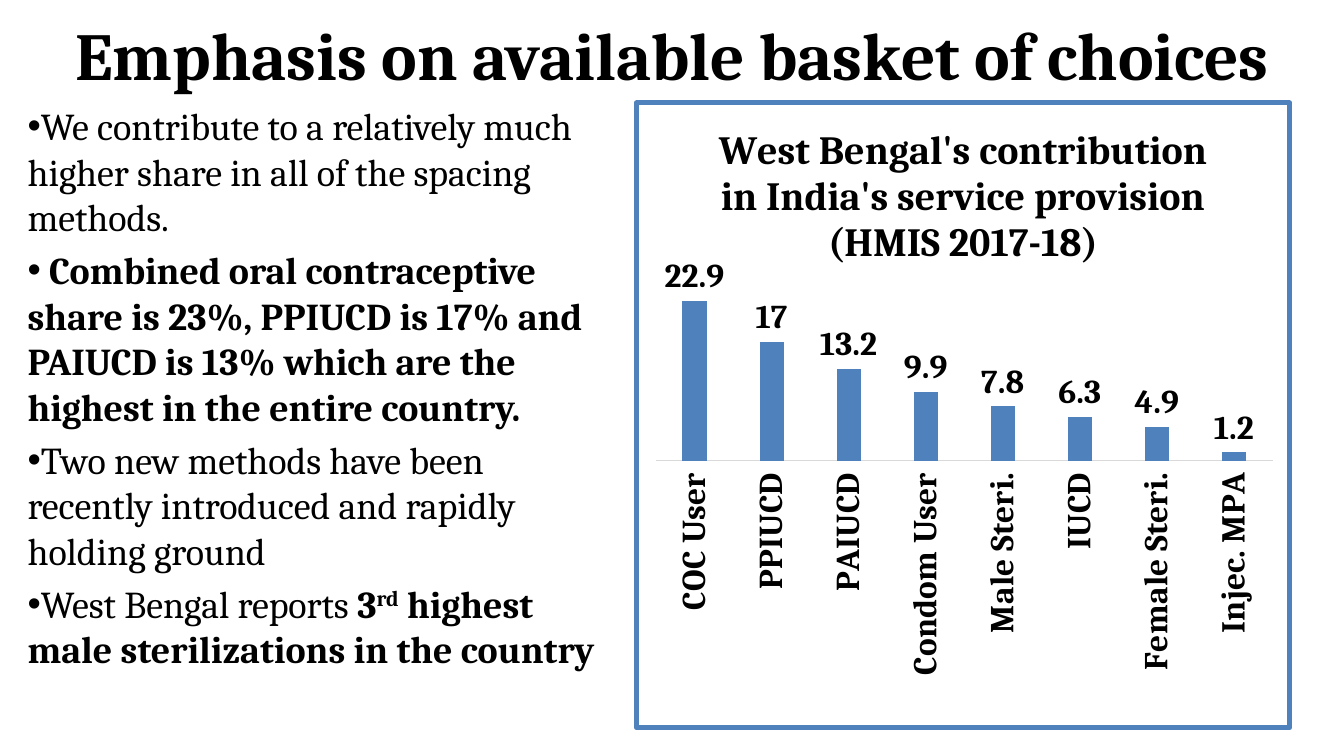
from dataclasses import dataclass

from lxml import etree
from pptx import Presentation
from pptx.chart.data import CategoryChartData
from pptx.dml.color import RGBColor
from pptx.enum.chart import XL_CHART_TYPE, XL_LABEL_POSITION, XL_TICK_LABEL_POSITION, XL_TICK_MARK
from pptx.enum.text import MSO_ANCHOR, MSO_AUTO_SIZE, PP_ALIGN
from pptx.oxml import parse_xml
from pptx.oxml.ns import nsdecls, qn
from pptx.util import Cm, Pt


@dataclass(frozen=True)
class Theme:
    font: str = "Cambria"
    text: RGBColor = RGBColor(0, 0, 0)
    accent: RGBColor = RGBColor(0x4F, 0x81, 0xBD)
    axis: RGBColor = RGBColor(0xD9, 0xD9, 0xD9)
    title_size: float = 40
    body_size: float = 22.6
    chart_title_size: float = 24
    label_size: float = 20


theme = Theme()


def format_font(font, size, bold):
    font.name = theme.font
    font.size = Pt(size)
    font.bold = bold
    font.color.rgb = theme.text


def add_text(paragraph, text, size=theme.body_size, bold=False, baseline=0):
    run = paragraph.add_run()
    run.text = text
    format_font(run.font, size, bold)
    if baseline:
        run.font._element.set("baseline", str(baseline * 1000))


presentation = Presentation()
presentation.slide_width = Cm(28.22)
presentation.slide_height = Cm(15.88)
slide = presentation.slides.add_slide(presentation.slide_layouts[5])

title = slide.shapes.title
title.left, title.top, title.width, title.height = Cm(0.33), Cm(0.43), Cm(27.56), Cm(1.68)
title.text_frame.auto_size = MSO_AUTO_SIZE.NONE
title.text_frame.vertical_anchor = MSO_ANCHOR.BOTTOM
title_paragraph = title.text_frame.paragraphs[0]
title_paragraph.alignment = PP_ALIGN.CENTER
add_text(title_paragraph, "Emphasis on available basket of choices", size=theme.title_size, bold=True)

bullets = [
    [("We contribute to a relatively much higher share in all of the spacing methods.", {})],
    [(" Combined oral contraceptive share is 23%, PPIUCD is 17% and PAIUCD is 13% "
      "which are the highest in the entire country.", {"bold": True})],
    [("Two new methods have been recently introduced and rapidly holding ground", {})],
    [("West Bengal reports ", {}),
     ("3", {"bold": True}),
     ("rd", {"bold": True, "baseline": 30}),
     (" highest male sterilizations in the country", {"bold": True})],
]
body = slide.shapes.add_textbox(Cm(0.33), Cm(2.03), Cm(12.57), Cm(13.61))
body.text_frame.word_wrap = True
for index, parts in enumerate(bullets):
    paragraph = body.text_frame.add_paragraph() if index else body.text_frame.paragraphs[0]
    paragraph.space_before = Pt(4.5)
    properties = paragraph._p.get_or_add_pPr()
    etree.SubElement(properties, qn("a:buFont"), typeface="Arial")
    etree.SubElement(properties, qn("a:buChar"), char="•")
    for text, text_format in parts:
        add_text(paragraph, text, **text_format)

contributions = {
    "COC User": 22.9,
    "PPIUCD": 17,
    "PAIUCD": 13.2,
    "Condom User": 9.9,
    "Male Steri.": 7.8,
    "IUCD": 6.3,
    "Female Steri.": 4.9,
    "Injec. MPA": 1.2,
}
chart_data = CategoryChartData()
chart_data.categories = list(contributions)
chart_data.add_series("Series 1", list(contributions.values()))
chart = slide.shapes.add_chart(
    XL_CHART_TYPE.COLUMN_CLUSTERED, Cm(13.31), Cm(2.11), Cm(13.82), Cm(13.23), chart_data
).chart
format_font(chart.font, theme.label_size, True)
chart.has_legend = False

chart.has_title = True
chart.chart_title.include_in_layout = False
chart_title_frame = chart.chart_title.text_frame
add_text(chart_title_frame.paragraphs[0], "West Bengal's contribution in India's service provision",
         size=theme.chart_title_size, bold=True)
add_text(chart_title_frame.add_paragraph(), "(HMIS 2017-18)",
         size=theme.chart_title_size, bold=True)

value_axis = chart.value_axis
value_axis.visible = False
value_axis.has_major_gridlines = False
value_axis.minimum_scale = 0
value_axis.maximum_scale = 25

category_axis = chart.category_axis
category_axis.major_tick_mark = XL_TICK_MARK.NONE
category_axis.tick_label_position = XL_TICK_LABEL_POSITION.LOW
category_axis.format.line.color.rgb = theme.axis
category_axis.format.line.width = Pt(0.75)
format_font(category_axis.tick_labels.font, theme.label_size, True)
label_body = chart.element.find(".//" + qn("c:catAx")).find(qn("c:txPr")).find(qn("a:bodyPr"))
label_body.set("rot", "-5400000")
label_body.set("vert", "horz")

plot = chart.plots[0]
plot.gap_width = 219
plot.overlap = -27
plot.vary_by_categories = False
series = plot.series[0]
series.format.fill.solid()
series.format.fill.fore_color.rgb = theme.accent
labels = series.data_labels
labels.show_value = True
labels.position = XL_LABEL_POSITION.OUTSIDE_END
format_font(labels.font, theme.label_size, True)

plot_area = chart.element.find(".//" + qn("c:plotArea"))
for layout in plot_area.findall(qn("c:layout")):
    plot_area.remove(layout)
plot_area.insert(0, parse_xml(
    f'<c:layout {nsdecls("c")}><c:manualLayout><c:layoutTarget val="inner"/>'
    '<c:xMode val="edge"/><c:yMode val="edge"/><c:x val="0.03"/><c:y val="0.294"/>'
    '<c:w val="0.944"/><c:h val="0.279"/></c:manualLayout></c:layout>'
))
chart.element.find(qn("c:chart")).addnext(parse_xml(
    f'<c:spPr {nsdecls("c", "a")}><a:noFill/><a:ln w="{Pt(3)}"><a:solidFill>'
    f'<a:srgbClr val="{theme.accent}"/></a:solidFill></a:ln></c:spPr>'
))

presentation.save("out.pptx")
